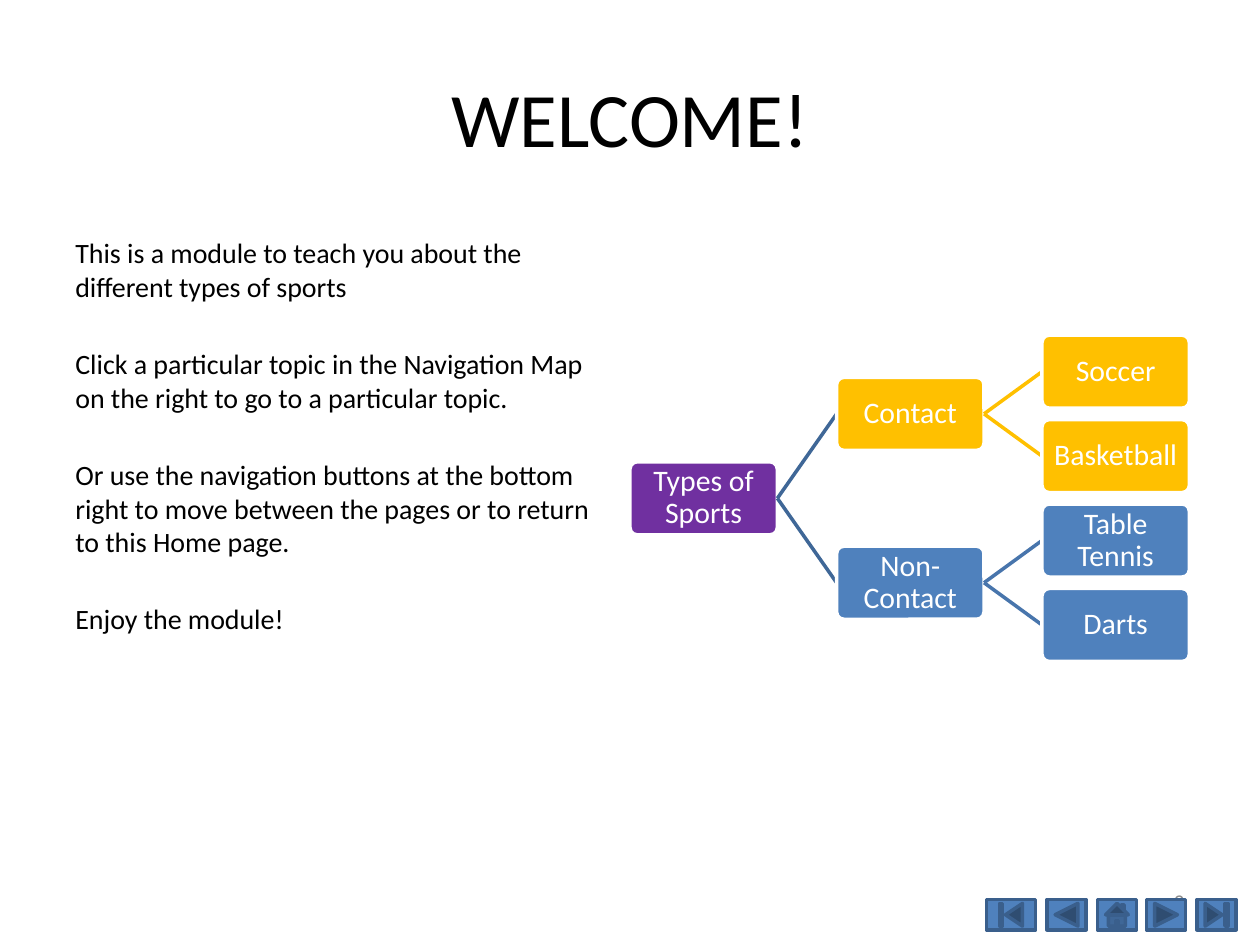
from dataclasses import dataclass

from lxml import etree
from pptx import Presentation
from pptx.dml.color import RGBColor
from pptx.enum.shapes import MSO_CONNECTOR, MSO_SHAPE
from pptx.enum.text import MSO_ANCHOR, PP_ALIGN
from pptx.oxml.ns import qn
from pptx.util import Inches, Pt

STRAIGHT = MSO_CONNECTOR.STRAIGHT
ROUNDED = MSO_SHAPE.ROUNDED_RECTANGLE
LEFT, CENTER, RIGHT = PP_ALIGN.LEFT, PP_ALIGN.CENTER, PP_ALIGN.RIGHT
TOP, MIDDLE = MSO_ANCHOR.TOP, MSO_ANCHOR.MIDDLE
LEFT_SIDE, RIGHT_SIDE = 1, 3
FONT = "Calibri"
COLORS = {
    "black": "000000", "white": "FFFFFF", "gray": "8C8C8C",
    "purple": "7030A0", "gold": "FFC000", "blue": "4F81BD",
    "root_link": "3F6797", "blue_link": "4875AC", "button_line": "3A5F8C",
}
COLUMN_LEFTS = (5, 6.64, 8.27)
FIRST_ROW, ROW_STEP = 2.66, 0.67
NODE_WIDTH, NODE_HEIGHT = 1.17, 0.58
BUTTON_TOP, BUTTON_HEIGHT = 7.14, 0.24
INTRODUCTION = (
    "This is a module to teach you about the different types of sports",
    "Click a particular topic in the Navigation Map on the right to go to a particular topic.",
    "Or use the navigation buttons at the bottom right to move between the pages "
    "or to return to this Home page.",
    "Enjoy the module!",
)


@dataclass(frozen=True)
class Topic:
    label: str
    column: int
    row: float
    fill: str
    link: str = ""
    children: tuple = ()


@dataclass(frozen=True)
class Button:
    kind: MSO_SHAPE
    left: float
    width: float = 0.31


TOPICS = Topic("Types of Sports", 0, 1.5, "purple", "root_link", (
    Topic("Contact", 1, 0.5, "gold", "gold", (
        Topic("Soccer", 2, 0, "gold"),
        Topic("Basketball", 2, 1, "gold"),
    )),
    Topic("Non-Contact", 1, 2.5, "blue", "blue_link", (
        Topic("Table Tennis", 2, 2, "blue"),
        Topic("Darts", 2, 3, "blue"),
    )),
))
BUTTONS = (
    Button(MSO_SHAPE.ACTION_BUTTON_FORWARD_OR_NEXT, 9.1),
    Button(MSO_SHAPE.ACTION_BUTTON_BACK_OR_PREVIOUS, 8.31),
    Button(MSO_SHAPE.ACTION_BUTTON_BEGINNING, 7.83, 0.39),
    Button(MSO_SHAPE.ACTION_BUTTON_END, 9.5),
    Button(MSO_SHAPE.ACTION_BUTTON_HOME, 8.71),
)


def rgb(name: str) -> RGBColor:
    return RGBColor.from_string(COLORS[name])


def write(frame, lines: tuple, size: float, color: str, align, anchor, gap: float = 0) -> None:
    frame.word_wrap = True
    frame.vertical_anchor = anchor
    frame.text = "\n".join(lines)
    for index, para in enumerate(frame.paragraphs):
        para.alignment = align
        para.space_before = Pt(gap if index else 0)
        for span in para.runs:
            span.font.name = FONT
            span.font.size = Pt(size)
            span.font.color.rgb = rgb(color)


def add_text(page, left: float, top: float, width: float, height: float):
    box = page.shapes.add_textbox(Inches(left), Inches(top), Inches(width), Inches(height))
    return box.text_frame


def add_box(page, kind, left: float, top: float, width: float, height: float,
            fill: str, line: str):
    box = page.shapes.add_shape(kind, Inches(left), Inches(top), Inches(width), Inches(height))
    box.shadow.inherit = False
    box.fill.solid()
    box.fill.fore_color.rgb = rgb(fill)
    box.line.color.rgb = rgb(line)
    box.line.width = Pt(2)
    return box


def add_link(page, parent, color: str):
    link = page.shapes.add_connector(STRAIGHT, 0, 0, 0, 0)
    link.begin_connect(parent, RIGHT_SIDE)
    link.line.color.rgb = rgb(color)
    link.line.width = Pt(2)
    etree.SubElement(link._element.spPr, qn("a:effectLst"))
    return link


def add_topic(page, topic: Topic):
    box = add_box(page, ROUNDED, COLUMN_LEFTS[topic.column], FIRST_ROW + ROW_STEP * topic.row,
                  NODE_WIDTH, NODE_HEIGHT, topic.fill, "white")
    box.adjustments[0] = 0.1
    frame = box.text_frame
    frame.margin_left = frame.margin_right = Inches(0.01)
    frame.margin_top = frame.margin_bottom = Inches(0.01)
    write(frame, (topic.label,), 17, "white", CENTER, MIDDLE)
    frame.paragraphs[0].line_spacing = 0.9
    for child in topic.children:
        link = add_link(page, box, topic.link)
        link.end_connect(add_topic(page, child), LEFT_SIDE)
    return box


def main() -> None:
    """Build the welcome page with its topic tree and navigation buttons."""
    deck = Presentation()
    deck.slide_width, deck.slide_height = Inches(10), Inches(7.5)
    page = deck.slides.add_slide(deck.slide_layouts[6])

    write(add_text(page, 7.17, 6.95, 2.33, 0.4), ("2",), 12, "gray", RIGHT, MIDDLE)
    for button in BUTTONS:
        add_box(page, button.kind, button.left, BUTTON_TOP, button.width, BUTTON_HEIGHT,
                "blue", "button_line")

    introduction = add_text(page, 0.5, 1.5, 4.5, 5.42)
    introduction.margin_top = Inches(0.37)
    write(introduction, INTRODUCTION, 16, "black", LEFT, TOP, 25)
    write(add_text(page, 0.5, 0.3, 9, 1.25), ("WELCOME!",), 44, "black", CENTER, MIDDLE)
    add_topic(page, TOPICS)
    deck.save("out.pptx")


if __name__ == "__main__":
    main()
